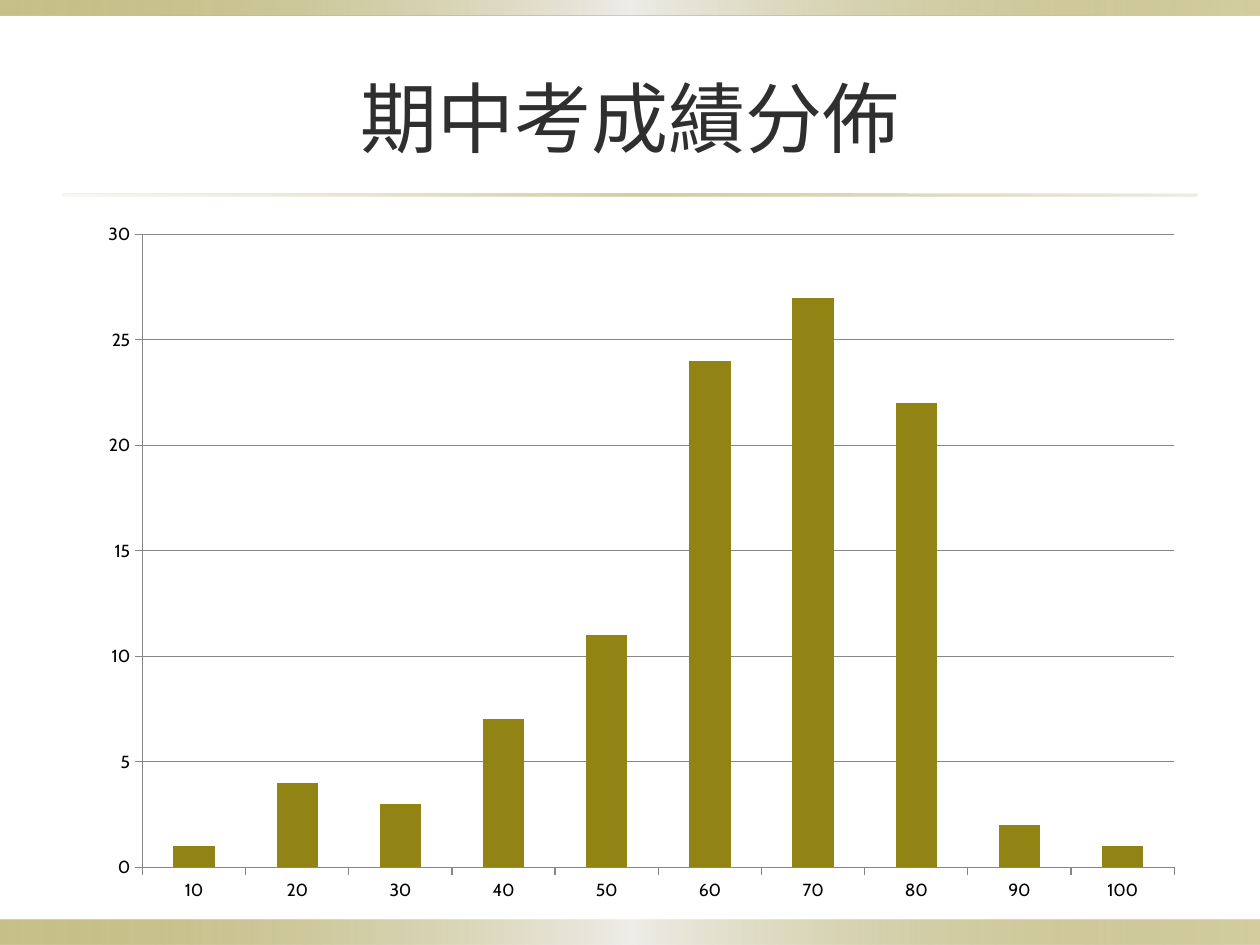
from lxml.etree import SubElement
from pptx import Presentation
from pptx.chart.data import CategoryChartData
from pptx.dml.color import RGBColor
from pptx.enum.chart import XL_CHART_TYPE as ChartType, XL_TICK_MARK as TickMark
from pptx.enum.shapes import MSO_SHAPE as Preset
from pptx.enum.text import MSO_ANCHOR as Anchor, PP_ALIGN as Align
from pptx.oxml.ns import qn
from pptx.util import Inches, Pt

FONT = "Cabin"
COLORS = {
    "olive": "918415",
    "pale": "EEEDE8",
    "sand": "DCD9CC",
    "title": "2F2F2F",
    "labels": "000000",
    "grid": "878787",
}


def color(name):
    return RGBColor.from_string(COLORS[name])


def write(frame, text, *, size, ink, align=Align.CENTER, anchor=Anchor.MIDDLE):
    """Put one formatted paragraph into a text frame."""
    frame.word_wrap = True
    frame.vertical_anchor = anchor
    paragraph = frame.paragraphs[0]
    paragraph.alignment = align
    run = paragraph.add_run()
    run.text = text
    run.font.name = FONT
    run.font.size = Pt(size)
    run.font.color.rgb = color(ink)


prs = Presentation()
prs.slide_width, prs.slide_height = Inches(10), Inches(7.5)
slide = prs.slides.add_slide(prs.slide_layouts[5])

# Bands at the edges and rule under the title; stops are (position %, color, opacity %)
edge_stops = [(0, "olive", 50), (50, "pale", 100), (100, "olive", 40)]
rule_stops = [(0, "sand", 20), (50, "olive", 40), (100, "sand", 50)]
bands = [
    (0, 7.3, 10, 0.2, edge_stops),
    (0, 0, 10, 0.12, edge_stops),
    (0.5, 1.54, 9, 0.02, rule_stops),
]
for left, top, width, height, stops in bands:
    band = slide.shapes.add_shape(
        Preset.RECTANGLE, Inches(left), Inches(top), Inches(width), Inches(height)
    )
    band.shadow.inherit = False
    band.line.fill.background()
    band.fill.gradient()
    band.fill.gradient_angle = 0
    stop_list = band.element.spPr.find(qn("a:gradFill")).find(qn("a:gsLst"))
    for old_stop in list(stop_list):
        stop_list.remove(old_stop)
    for position, name, opacity in stops:
        stop = SubElement(stop_list, qn("a:gs"), pos=str(position * 1000))
        tint = SubElement(stop, qn("a:srgbClr"), val=COLORS[name])
        SubElement(tint, qn("a:alpha"), val=str(opacity * 1000))

title = slide.shapes.title
title.left, title.top = Inches(0.5), Inches(0.3)
title.width, title.height = Inches(9), Inches(1.25)
write(title.text_frame, "期中考成績分佈", size=44, ink="title")

# Score distribution
scores = CategoryChartData()
scores.categories = [str(score) for score in range(10, 101, 10)]
scores.add_series("Series 1", [1, 4, 3, 7, 11, 24, 27, 22, 2, 1])
chart = slide.shapes.add_chart(
    ChartType.COLUMN_CLUSTERED,
    Inches(0.5), Inches(1.75), Inches(9), Inches(5.52), scores,
).chart
chart.has_title = False
chart.has_legend = False
chart.font.name = FONT
chart.font.size = Pt(10)
chart.font.color.rgb = color("labels")

columns = chart.plots[0]
columns.gap_width = 150
columns.vary_by_categories = False
column_fill = columns.series[0].format.fill
column_fill.solid()
column_fill.fore_color.rgb = color("olive")

score_axis, count_axis = chart.category_axis, chart.value_axis
count_axis.minimum_scale = 0
count_axis.maximum_scale = 30
count_axis.major_unit = 5
count_axis.has_major_gridlines = True
score_axis.has_major_gridlines = False
for axis in (score_axis, count_axis):
    axis.major_tick_mark = TickMark.OUTSIDE
    axis.minor_tick_mark = TickMark.NONE
for ruled in (score_axis, count_axis, count_axis.major_gridlines):
    ruled.format.line.color.rgb = color("grid")
    ruled.format.line.width = Pt(0.75)

# Fixed inner plot area, as fractions of the chart
plot_area = chart.element.chart.plotArea
for old_layout in plot_area.findall(qn("c:layout")):
    plot_area.remove(old_layout)
layout = SubElement(plot_area, qn("c:layout"))
plot_area.insert(0, layout)
manual = SubElement(layout, qn("c:manualLayout"))
settings = [
    ("layoutTarget", "inner"), ("xMode", "edge"), ("yMode", "edge"),
    ("x", "0.07"), ("y", "0.02"), ("w", "0.91"), ("h", "0.91"),
]
for tag, value in settings:
    SubElement(manual, qn(f"c:{tag}"), val=value)

prs.save("out.pptx")
